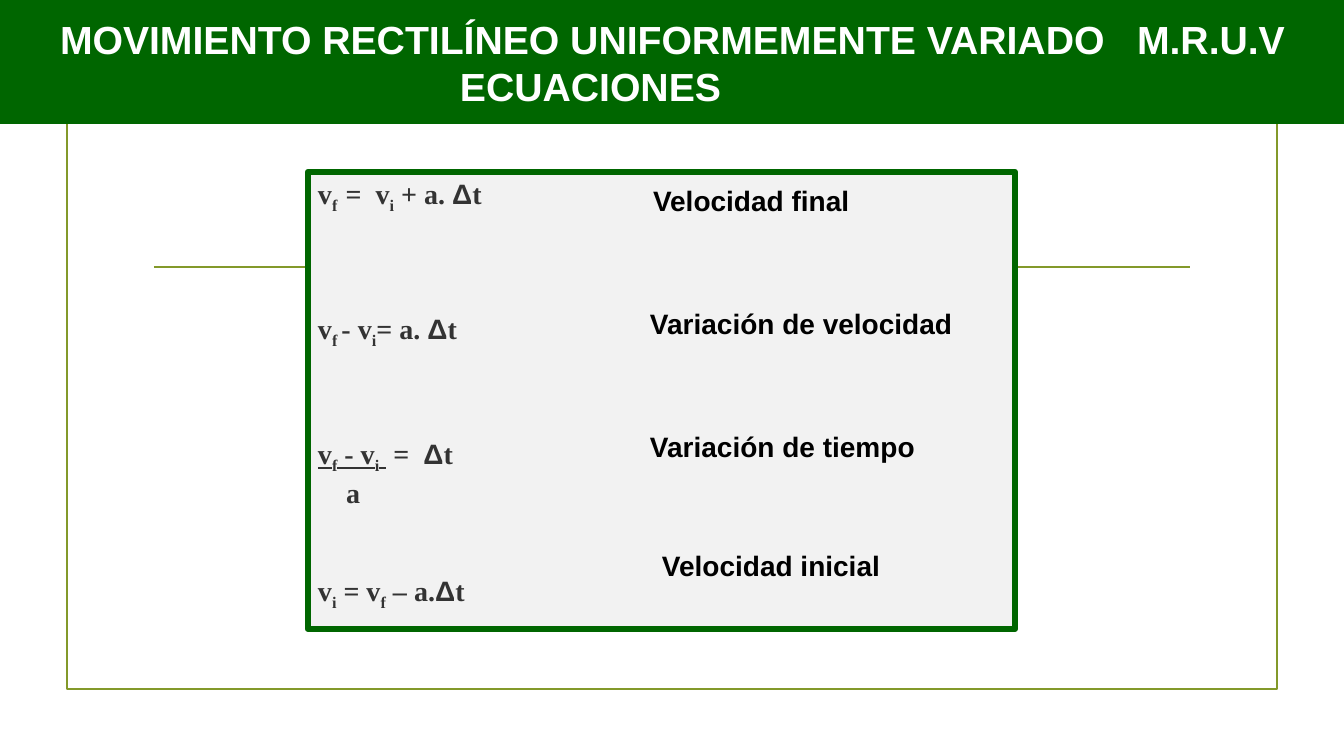
from lxml import etree
from pptx import Presentation
from pptx.dml.color import RGBColor
from pptx.enum.shapes import MSO_CONNECTOR, MSO_SHAPE
from pptx.enum.text import MSO_ANCHOR, PP_ALIGN
from pptx.oxml.ns import qn
from pptx.util import Emu, Pt

RECTANGLE = MSO_SHAPE.RECTANGLE
STRAIGHT = MSO_CONNECTOR.STRAIGHT
LEFT = PP_ALIGN.LEFT
TOP, MIDDLE = MSO_ANCHOR.TOP, MSO_ANCHOR.MIDDLE

PX_PER_INCH = 100.8
GREEN, OLIVE, PALE = "006600", "83992A", "F2F2F2"
WHITE, BLACK, GRAY = "FFFFFF", "000000", "333333"
SANS, SERIF = "Arial", "Times New Roman"

# Run styles inside an equation
PLAIN, SUB, UNDER = "plain", "sub", "under"

# Each equation: space before (pt), left indent (px), runs, whether Δt closes it
EQUATIONS = [
    (0, 0, [("v", PLAIN), ("f  ", SUB), ("=  v", PLAIN), ("i", SUB), (" + a. ", PLAIN)], True),
    (69, 0, [("v", PLAIN), ("f ", SUB), ("- v", PLAIN), ("i", SUB), ("= a. ", PLAIN)], True),
    (62, 0, [("v", UNDER), ("f", SUB), (" - v", UNDER), ("i", SUB), (" ", UNDER),
             (" =  ", PLAIN)], True),
    (0, 28, [("a", PLAIN)], False),
    (46, 0, [("v", PLAIN), ("i", SUB), (" = v", PLAIN), ("f", SUB), (" – a.", PLAIN)], True),
]

# Each label: text, left, top, width (px)
LABELS = [
    ("Velocidad final", 643, 179, 218),
    ("Variación de velocidad", 640, 302, 334),
    ("Variación de tiempo", 640, 425, 286),
    ("Velocidad inicial", 652, 544, 240),
]


def px(length):
    return Emu(round(length * 914400 / PX_PER_INCH))


def color(hex_code):
    return RGBColor.from_string(hex_code)


def add_box(slide, left, top, width, height, fill=None, line=None, line_width=1.25):
    box = slide.shapes.add_shape(RECTANGLE, px(left), px(top), px(width), px(height))
    box.shadow.inherit = False
    if fill:
        box.fill.solid()
        box.fill.fore_color.rgb = color(fill)
    else:
        box.fill.background()
    if line:
        box.line.color.rgb = color(line)
        box.line.width = Pt(line_width)
    else:
        box.line.fill.background()
    return box


def add_rule(slide, left, right, y):
    rule = slide.shapes.add_connector(STRAIGHT, px(left), px(y), px(right), px(y))
    rule.line.color.rgb = color(OLIVE)
    rule.line.width = Pt(1.25)
    etree.SubElement(rule._element.spPr, qn("a:effectLst"))


def set_frame(frame, anchor, left_inset=10, wrap=True):
    frame.word_wrap = wrap
    frame.vertical_anchor = anchor
    frame.margin_left, frame.margin_right = px(left_inset), px(10)
    frame.margin_top = frame.margin_bottom = px(5)


def set_font(paragraph, size, name, hex_code):
    paragraph.alignment = LEFT
    paragraph.font.size = Pt(size)
    paragraph.font.name = name
    paragraph.font.bold = True
    paragraph.font.color.rgb = color(hex_code)


def next_paragraph(frame, index):
    return frame.add_paragraph() if index else frame.paragraphs[0]


def add_title(slide):
    frame = add_box(slide, 0, 0, 1344, 124, fill=GREEN).text_frame
    set_frame(frame, MIDDLE, left_inset=60)
    heading = frame.paragraphs[0]
    heading.text = "MOVIMIENTO RECTILÍNEO UNIFORMEMENTE VARIADO\tM.R.U.V"
    tabs = etree.SubElement(heading._p.get_or_add_pPr(), qn("a:tabLst"))
    etree.SubElement(tabs, qn("a:tab"), pos=str(px(1077)), algn="l")
    subheading = frame.add_paragraph()
    subheading.text = "ECUACIONES"
    subheading._p.get_or_add_pPr().set("marL", str(px(400)))
    for paragraph in (heading, subheading):
        set_font(paragraph, 28, SANS, WHITE)


def add_equation(paragraph, space, indent, parts, ends_in_time):
    if space:
        paragraph.space_before = Pt(space)
    if indent:
        paragraph._p.get_or_add_pPr().set("marL", str(px(indent)))
    set_font(paragraph, 20, SERIF, GRAY)
    for text, style in parts:
        run = paragraph.add_run()
        run.text = text
        if style == SUB:
            run._r.get_or_add_rPr().set("baseline", "-25000")
        elif style == UNDER:
            run.font.underline = True
    if ends_in_time:
        delta = paragraph.add_run()
        delta.text = "Δ"
        delta.font.name = SANS
        paragraph.add_run().text = "t"


def add_equations(slide):
    frame = add_box(slide, 308, 172, 707, 457, PALE, GREEN, 4.5).text_frame
    set_frame(frame, TOP)
    for index, equation in enumerate(EQUATIONS):
        add_equation(next_paragraph(frame, index), *equation)


def add_label(slide, text, left, top, width):
    frame = slide.shapes.add_textbox(px(left), px(top), px(width), px(43)).text_frame
    set_frame(frame, TOP, wrap=False)
    frame.paragraphs[0].text = text
    set_font(frame.paragraphs[0], 20, SANS, BLACK)


def main():
    deck = Presentation()
    deck.slide_width, deck.slide_height = px(1344), px(756)
    slide = deck.slides.add_slide(deck.slide_layouts[6])

    # Background frame and rule
    add_box(slide, 67, 67, 1210, 622, line=OLIVE)
    add_rule(slide, 154, 1190, 267)

    # Title band
    add_title(slide)

    # Equations and their names
    add_equations(slide)
    for label in LABELS:
        add_label(slide, *label)

    deck.save("out.pptx")


if __name__ == "__main__":
    main()
